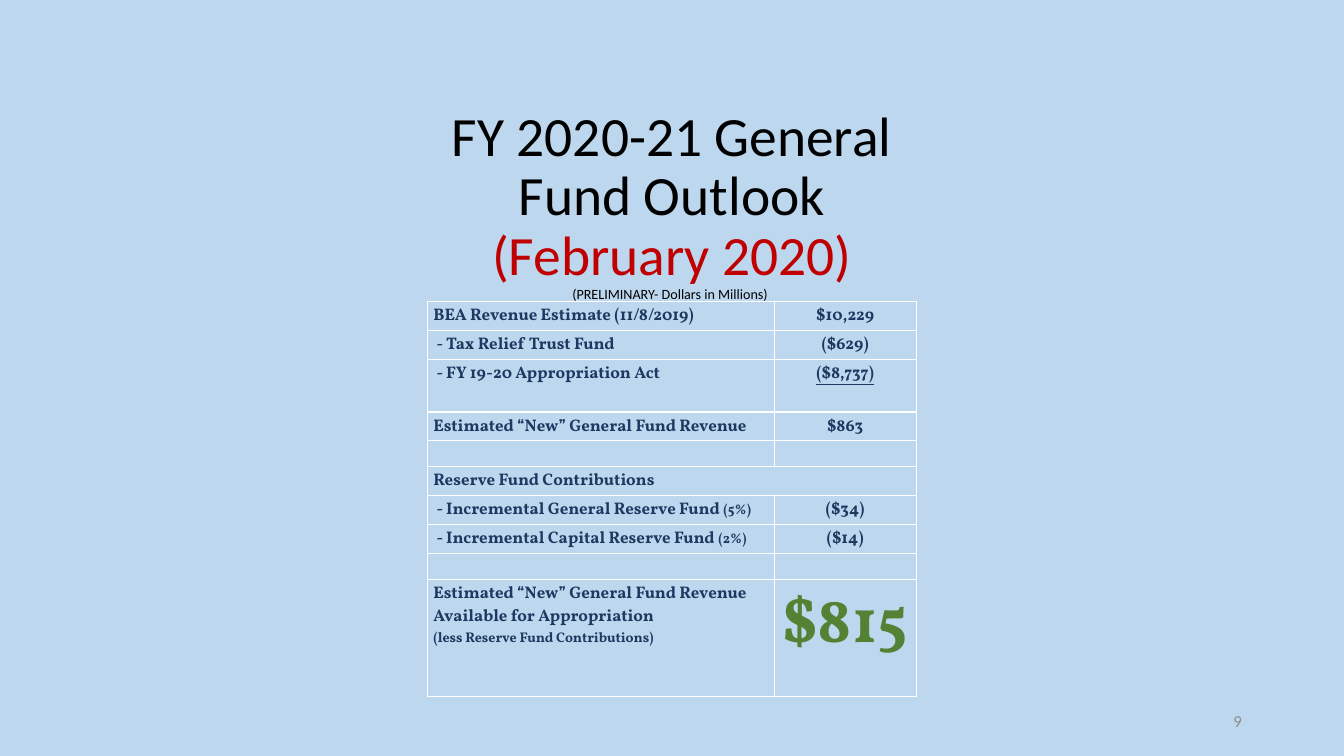
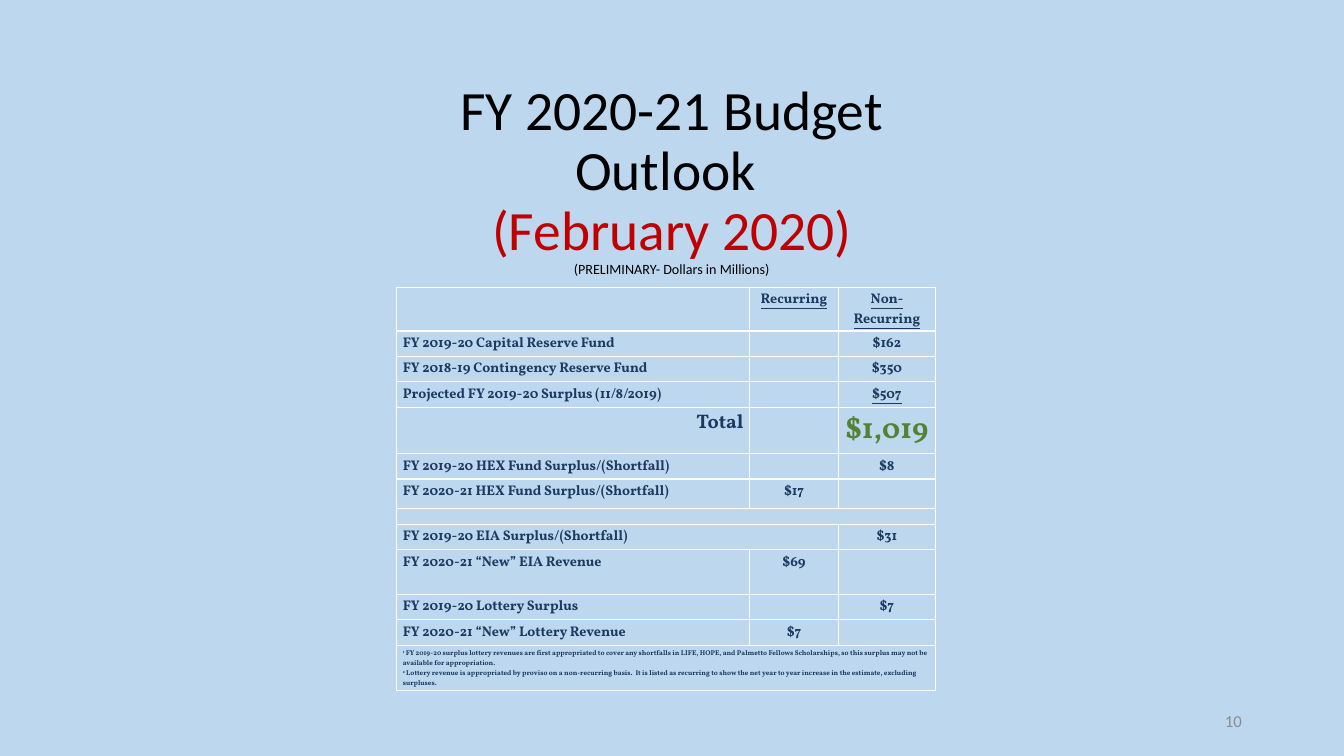
from dataclasses import dataclass

from lxml import etree
from pptx import Presentation
from pptx.dml.color import RGBColor
from pptx.enum.text import MSO_ANCHOR as Anchor, MSO_AUTO_SIZE as AutoSize, PP_ALIGN as Align
from pptx.oxml.ns import qn
from pptx.util import Cm, Pt

SKY = RGBColor(0xBD, 0xD7, 0xEE)
NAVY = RGBColor(0x1C, 0x39, 0x61)
GREEN = RGBColor(0x54, 0x82, 0x35)
RED = RGBColor(0xC0, 0x00, 0x00)
BLACK = RGBColor(0x00, 0x00, 0x00)
GREY = RGBColor(0x8C, 0x8C, 0x8C)
BORDER = "FFFFFF"

TITLE_ONLY = 5
EMPTY_SIZE = 5
HEADING = {"name": "Calibri", "size": Pt(39.6), "color": BLACK}
HEADING_DATE = HEADING | {"color": RED}
HEADING_NOTE = HEADING | {"size": Pt(10.1)}
PAGE_NUMBER = {"name": "Calibri", "size": Pt(12), "color": GREY}
TABLE_TEXT = {"name": "Vollkorn", "bold": True, "color": NAVY}
UNDERLINED = {"underline": True}
SMALL = {"size": Pt(10)}
TINY = {"size": Pt(5)}
SUPERSCRIPT = {"baseline": 30000}


@dataclass
class Cell:
    """Table cell; each paragraph is a list of (text, format) runs."""
    paragraphs: list
    align: Align = None
    span: int = 1
    indent: Cm = Cm(0)


def text_cell(text, text_format=None, **options):
    return Cell([[(text, text_format or {})]], **options)


def item(label, note=""):
    """Indented dash entry with an optional small note behind it."""
    runs = [(f"- {label}", {})]
    if note:
        runs.append((note, SMALL))
    return Cell([runs], indent=Cm(0.08))


def add_run(paragraph, text, text_format):
    run = paragraph.add_run()
    run.text = text
    for name, value in text_format.items():
        if name == "color":
            run.font.color.rgb = value
        elif name == "baseline":
            run._r.get_or_add_rPr().set("baseline", str(value))
        else:
            setattr(run.font, name, value)


def set_borders(cell):
    properties = cell._tc.get_or_add_tcPr()
    for position, side in enumerate(("lnL", "lnR", "lnT", "lnB")):
        line = etree.Element(qn(f"a:{side}"), w=str(Pt(1)))
        fill = etree.SubElement(line, qn("a:solidFill"))
        etree.SubElement(fill, qn("a:srgbClr"), val=BORDER)
        properties.insert(position, line)


def fill_cell(cell, content, base_format, default_align):
    margins = {"margin_left": Cm(0.15) + content.indent, "margin_right": Cm(0.15),
               "margin_top": Cm(0.08), "margin_bottom": Cm(0.08)}
    for name, value in margins.items():
        setattr(cell, name, value)
    frame = cell.text_frame
    for index, runs in enumerate(content.paragraphs):
        paragraph = frame.add_paragraph() if index else frame.paragraphs[0]
        paragraph.alignment = content.align or default_align
        for text, text_format in runs:
            add_run(paragraph, text, base_format | text_format)
        if not runs:
            etree.SubElement(paragraph._p, qn("a:endParaRPr"), sz=str(EMPTY_SIZE * 100))


def add_outlook_table(slide, left, top, widths, rows, size):
    """Rows are (height in cm, cells); None leaves a cell empty."""
    heights = [height for height, _ in rows]
    table = slide.shapes.add_table(len(rows), len(widths), Cm(left), Cm(top),
                                   Cm(sum(widths)), Cm(sum(heights))).table
    table.first_row = table.horz_banding = False
    for column, width in zip(table.columns, widths):
        column.width = Cm(width)
    base_format = TABLE_TEXT | {"size": Pt(size)}
    for row_index, (height, contents) in enumerate(rows):
        table.rows[row_index].height = Cm(height)
        for column_index in range(len(widths)):
            cell = table.cell(row_index, column_index)
            cell.fill.background()
            set_borders(cell)
            content = contents[column_index] if column_index < len(contents) else None
            if content is None:
                content = Cell([[]])
            elif isinstance(content, str):
                content = text_cell(content)
            fill_cell(cell, content, base_format, Align.CENTER if column_index else Align.LEFT)
            if content.span > 1:
                cell.merge(table.cell(row_index, column_index + content.span - 1))


def format_title(slide, top, height, runs, bottom_inset=0.13):
    title = slide.shapes.title
    title.left, title.top, title.width, title.height = Cm(10.77), Cm(top), Cm(12.32), Cm(height)
    frame = title.text_frame
    settings = {"word_wrap": True, "auto_size": AutoSize.NONE, "vertical_anchor": Anchor.MIDDLE,
                "margin_left": Cm(0.25), "margin_right": Cm(0.25),
                "margin_top": Cm(0.13), "margin_bottom": Cm(bottom_inset)}
    for name, value in settings.items():
        setattr(frame, name, value)
    paragraph = frame.paragraphs[0]
    paragraph.alignment = Align.CENTER
    paragraph.line_spacing = 0.9
    for text, text_format, breaks_after in runs:
        add_run(paragraph, text, text_format)
        if breaks_after:
            paragraph.add_line_break()


def add_page_number(slide, number):
    box = slide.shapes.add_textbox(Cm(23.93), Cm(17.65), Cm(7.62), Cm(1.02))
    frame = box.text_frame
    frame.word_wrap = True
    frame.vertical_anchor = Anchor.MIDDLE
    paragraph = frame.paragraphs[0]
    paragraph.alignment = Align.RIGHT
    add_run(paragraph, str(number), PAGE_NUMBER)


def add_outlook_slide(presentation, number):
    slide = presentation.slides.add_slide(presentation.slide_layouts[TITLE_ONLY])
    add_page_number(slide, number)
    return slide


def build_general_fund(presentation):
    slide = add_outlook_slide(presentation, 9)
    format_title(slide, 4.7, 1.4, [
        ("FY 2020-21 General Fund Outlook ", HEADING, False),
        ("(February 2020)", HEADING_DATE, True),
        ("(PRELIMINARY- Dollars in Millions) ", HEADING_NOTE, False),
    ], bottom_inset=0.57)
    available = Cell([
        [("Estimated “New” General Fund Revenue Available for Appropriation", {})],
        [("(less Reserve Fund Contributions)", SMALL)],
    ])
    balance = text_cell("$815", {"size": Pt(45), "color": GREEN})
    rows = [
        (0.73, ["BEA Revenue Estimate (11/8/2019)", "$10,229"]),
        (0.73, [item("Tax Relief Trust Fund"), "($629)"]),
        (1.33, [item("FY 19-20 Appropriation Act"), text_cell("($8,737)", UNDERLINED)]),
        (0.73, ["Estimated “New” General Fund Revenue", "$863"]),
        (0.65, []),
        (0.73, [text_cell("Reserve Fund Contributions", span=2)]),
        (0.73, [item("Incremental General Reserve Fund ", "(5%)"), "($34)"]),
        (0.73, [item("Incremental Capital Reserve Fund ", "(2%)"), "($14)"]),
        (0.65, []),
        (2.95, [available, balance]),
    ]
    add_outlook_table(slide, 10.77, 7.59, [8.74, 3.58], rows, 12)


def build_budget(presentation):
    slide = add_outlook_slide(presentation, 10)
    format_title(slide, 3.73, 1.63, [
        ("FY 2020-21 Budget Outlook ", HEADING, True),
        ("(February 2020)", HEADING_DATE, True),
        ("(PRELIMINARY- Dollars in Millions)", HEADING_NOTE, False),
    ])
    notes = [
        " FY 2019-20 surplus lottery revenues are first appropriated to cover any shortfalls in LIFE, "
        "HOPE, and Palmetto Fellows Scholarships, so this surplus may not be available for appropriation.",
        " Lottery revenue is appropriated by proviso on a non-recurring basis.  It is listed as recurring "
        "to show the net year to year increase in the estimate, excluding surpluses.",
    ]
    footnotes = Cell([[(str(mark), TINY | SUPERSCRIPT), (note, TINY)]
                      for mark, note in enumerate(notes, 1)], span=3)
    total = text_cell("Total", {"size": Pt(14)}, align=Align.RIGHT)
    rows = [
        (1.1, [None, text_cell("Recurring", UNDERLINED), text_cell("Non-Recurring", UNDERLINED)]),
        (0.64, ["FY 2019-20 Capital Reserve Fund", None, "$162"]),
        (0.64, ["FY 2018-19 Contingency Reserve Fund", None, "$350"]),
        (0.64, ["Projected FY 2019-20 Surplus (11/8/2019)", None, text_cell("$507", UNDERLINED)]),
        (1.17, [total, None, text_cell("$1,019", {"size": Pt(21), "color": GREEN})]),
        (0.64, ["FY 2019-20 HEX Fund Surplus/(Shortfall)", None, "$8"]),
        (0.74, ["FY 2020-21 HEX Fund Surplus/(Shortfall)", "$17"]),
        (0.4, [Cell([[]], span=3)]),
        (0.64, [text_cell("FY 2019-20 EIA Surplus/(Shortfall)", span=2), None, "$31"]),
        (1.13, ["FY 2020-21 “New” EIA Revenue", "$69"]),
        (0.64, ["FY 2019-20 Lottery Surplus", None, "$7"]),
        (0.65, ["FY 2020-21 “New” Lottery Revenue", "$7"]),
        (1.13, [footnotes]),
    ]
    add_outlook_table(slide, 10, 7.24, [8.89, 2.24, 2.44], rows, 10)


def main():
    presentation = Presentation()
    presentation.slide_width, presentation.slide_height = Cm(33.87), Cm(19.05)
    background = presentation.slide_master.background.fill
    background.solid()
    background.fore_color.rgb = SKY
    build_general_fund(presentation)
    build_budget(presentation)
    presentation.save("out.pptx")


if __name__ == "__main__":
    main()
